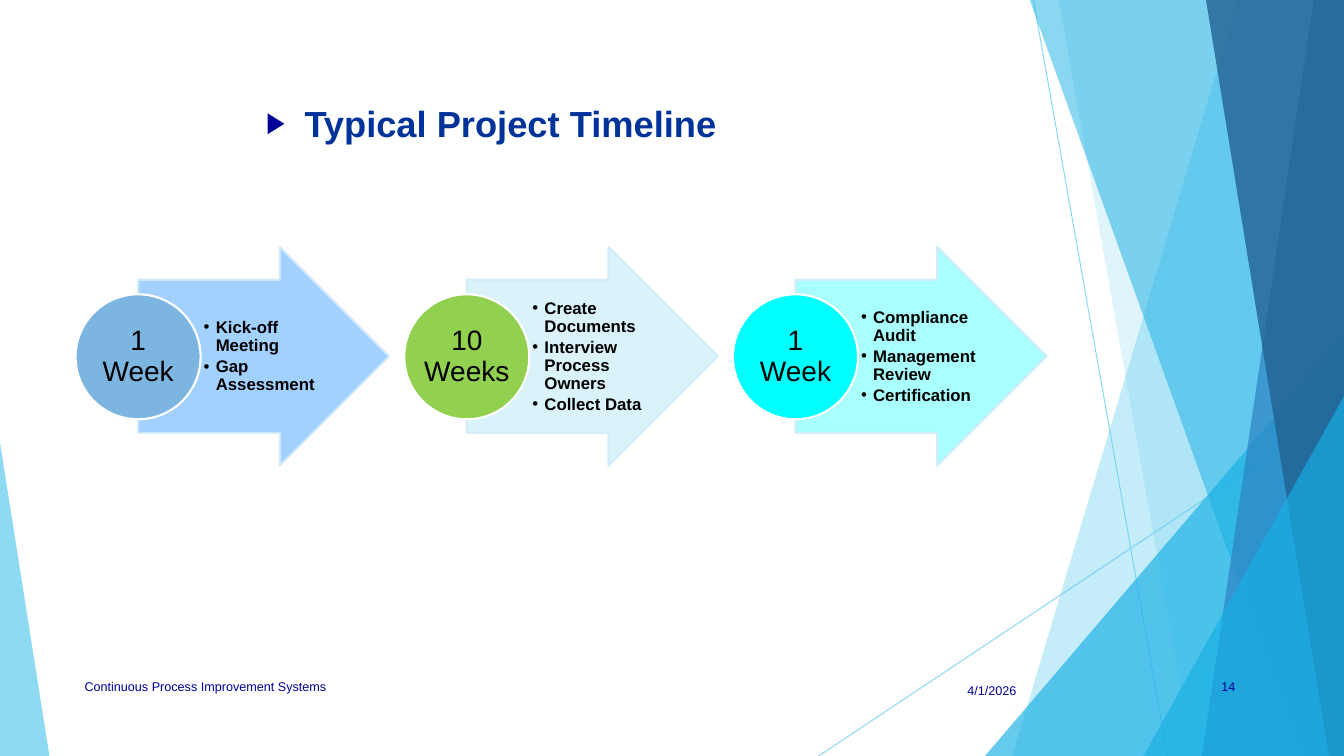
from lxml import etree
from pptx import Presentation
from pptx.dml.color import RGBColor
from pptx.enum.shapes import MSO_CONNECTOR, MSO_SHAPE
from pptx.enum.text import MSO_ANCHOR, MSO_AUTO_SIZE, PP_ALIGN
from pptx.oxml.ns import qn
from pptx.util import Inches, Pt

LINE = MSO_CONNECTOR.STRAIGHT
TRIANGLE = MSO_SHAPE.ISOSCELES_TRIANGLE
ARROW, CIRCLE = MSO_SHAPE.RIGHT_ARROW, MSO_SHAPE.OVAL
TOP, MIDDLE = MSO_ANCHOR.TOP, MSO_ANCHOR.MIDDLE
LEFT, CENTER, RIGHT = PP_ALIGN.LEFT, PP_ALIGN.CENTER, PP_ALIGN.RIGHT

FONT = "Arial"
WIDTH, HEIGHT = 13.33, 7.5
FACET_TOP = -0.01
COLORS = {
    "sky": "5FCBEF",
    "azure": "17B0E4",
    "blue": "2E83C3",
    "deep": "226292",
    "navy": "000099",
    "title": "003399",
    "black": "000000",
    "white": "FFFFFF",
    "arrow_edge": "D2ECF9",
    "start_arrow": "99CCFF",
    "start_circle": "7CB5E0",
    "work_arrow": "D7F2FB",
    "work_circle": "92D050",
    "audit_arrow": "9FFFFD",
    "audit_circle": "00FFFF",
}
FACETS = [
    (12.28, 10.04, "sky", 36),
    (10.5, 11.83, "sky", 20),
    (10.21, 12.91, "azure", 50),
    (13.03, 11.92, "blue", 70),
    (11.96, 13.18, "deep", 80),
]
STAGES = [
    ("1 Week", "start", ["Kick-off Meeting", "Gap Assessment"]),
    ("10 Weeks", "work",
     ["Create Documents", "Interview Process Owners", "Collect Data"]),
    ("1 Week", "audit",
     ["Compliance Audit", "Management Review", "Certification"]),
]
STAGE_LEFT, STAGE_PITCH = 0.75, 3.26


def paint(color_format, color, opacity=100):
    color_format.rgb = RGBColor.from_string(COLORS[color])
    if opacity < 100:
        element = color_format._xFill.find(qn("a:srgbClr"))
        etree.SubElement(element, qn("a:alpha")).set("val", str(opacity * 1000))


def style_shape(shape, fill, opacity=100, line=None, line_opacity=100):
    shape.shadow.inherit = False
    shape.fill.solid()
    paint(shape.fill.fore_color, fill, opacity)
    if line:
        shape.line.width = Pt(1.5)
        shape.line.fill.solid()
        paint(shape.line.fill.fore_color, line, line_opacity)
    else:
        shape.line.fill.background()


def add_preset(slide, preset, box, fill, adjustments=(), **style):
    shape = slide.shapes.add_shape(preset, *map(Inches, box))
    for index, value in enumerate(adjustments):
        shape.adjustments[index] = value
    style_shape(shape, fill, **style)


def add_facet(slide, top_left, bottom_left, color, opacity):
    builder = slide.shapes.build_freeform(Inches(top_left), Inches(FACET_TOP))
    corners = [(WIDTH, FACET_TOP), (WIDTH, HEIGHT), (bottom_left, HEIGHT)]
    builder.add_line_segments(
        [(Inches(x), Inches(y)) for x, y in corners], close=True)
    style_shape(builder.convert_to_shape(), color, opacity)


def add_thin_line(slide, *ends):
    connector = slide.shapes.add_connector(LINE, *map(Inches, ends))
    connector.line.width = Pt(0.75)
    connector.line.fill.solid()
    paint(connector.line.fill.fore_color, "sky", 70)
    etree.SubElement(connector._element.spPr, qn("a:effectLst"))


def add_bullet(paragraph, character, indent, color, size):
    properties = paragraph._p.get_or_add_pPr()
    properties.set("marL", str(Inches(indent)))
    properties.set("indent", str(-Inches(indent)))
    bullet_color = etree.SubElement(properties, qn("a:buClr"))
    etree.SubElement(bullet_color, qn("a:srgbClr")).set("val", COLORS[color])
    etree.SubElement(properties, qn("a:buSzPct")).set("val", str(size * 1000))
    etree.SubElement(properties, qn("a:buFont")).set("typeface", FONT)
    etree.SubElement(properties, qn("a:buChar")).set("char", character)


def write_text(shape, lines, size=9, color="navy", bold=False, align=LEFT,
               anchor=MIDDLE, insets=(0.1, 0.05, 0.1, 0.05), spacing=1.0,
               after=0, bullet=None, indent=0, bullet_color="black",
               bullet_size=100):
    frame = shape.text_frame
    frame.word_wrap = True
    frame.auto_size = MSO_AUTO_SIZE.NONE
    frame.vertical_anchor = anchor
    (frame.margin_left, frame.margin_top,
     frame.margin_right, frame.margin_bottom) = map(Inches, insets)
    frame.text = "\n".join(lines)
    for paragraph in frame.paragraphs:
        paragraph.alignment = align
        paragraph.line_spacing = spacing
        paragraph.space_after = Pt(after)
        if bullet:
            add_bullet(paragraph, bullet, indent, bullet_color, bullet_size)
        paragraph.font.name = FONT
        paragraph.font.size = Pt(size)
        paragraph.font.bold = bold
        paragraph.font.color.rgb = RGBColor.from_string(COLORS[color])


def add_text(slide, box, lines, **text_format):
    write_text(slide.shapes.add_textbox(*map(Inches, box)), lines, **text_format)


def add_backdrop(slide):
    add_thin_line(slide, 10.25, 0, 11.58, HEIGHT)
    add_thin_line(slide, WIDTH, 4.03, 8.12, HEIGHT)
    for facet in FACETS[:2]:
        add_facet(slide, *facet)
    add_preset(slide, TRIANGLE, (9.77, 3.33, 3.56, 4.17), "azure", [1], opacity=66)
    for facet in FACETS[2:]:
        add_facet(slide, *facet)
    add_preset(slide, TRIANGLE, (11.34, 3.93, 1.99, 3.57), "azure", [1], opacity=66)
    add_preset(slide, TRIANGLE, (0, 4.39, 0.49, 3.11), "sky", [0], opacity=70)


def add_stage(slide, left, duration, palette, tasks):
    add_preset(slide, ARROW, (left + 0.62, 2.45, 2.49, 2.17), palette + "_arrow",
               [0.7, 0.5], opacity=90, line="arrow_edge", line_opacity=90)
    add_text(slide, (left + 1.24, 2.78, 1.21, 1.52), tasks, size=12,
             color="black", bold=True, insets=(0.03, 0.01, 0.02, 0.01),
             spacing=0.9, after=2, bullet="•", indent=0.12)
    add_preset(slide, CIRCLE, (left, 2.92, 1.24, 1.24), palette + "_circle",
               line="white")
    add_text(slide, (left + 0.18, 3.1, 0.88, 0.88), [duration], size=20,
             color="black", align=CENTER, insets=(0.01,) * 4, spacing=0.9)


def add_title(slide, text):
    title = slide.shapes.title
    title.left, title.top, title.width, title.height = map(
        Inches, (2.54, 0.95, 6.19, 0.47))
    write_text(title, [text], size=25.9, color="title", bold=True, anchor=TOP,
               bullet="▶", indent=0.38, bullet_color="navy", bullet_size=80)
    slide.shapes._spTree.append(title._element)


def main():
    presentation = Presentation()
    presentation.slide_width = Inches(WIDTH)
    presentation.slide_height = Inches(HEIGHT)
    slide = presentation.slides.add_slide(presentation.slide_layouts[5])
    add_backdrop(slide)
    add_text(slide, (9.18, 6.65, 1, 0.4), ["4/1/2026"], align=RIGHT)
    add_text(slide, (0.74, 6.61, 3.15, 0.4),
             ["Continuous Process Improvement Systems"])
    add_text(slide, (11.6, 6.61, 0.75, 0.4), ["14"], align=RIGHT)
    for index, stage in enumerate(STAGES):
        add_stage(slide, STAGE_LEFT + index * STAGE_PITCH, *stage)
    add_title(slide, "Typical Project Timeline")
    presentation.save("out.pptx")


if __name__ == "__main__":
    main()
